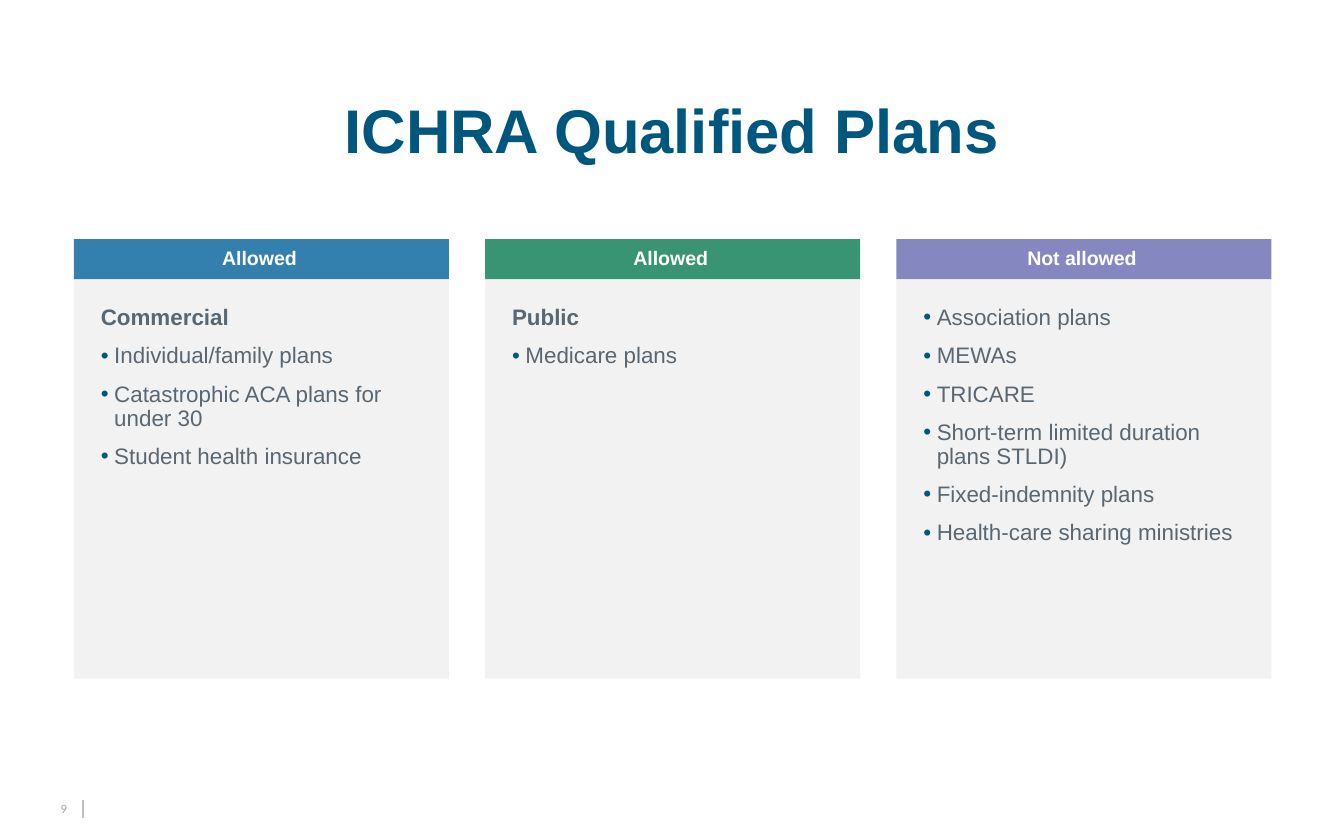
from dataclasses import dataclass
from lxml import etree
from pptx import Presentation
from pptx.dml.color import RGBColor as RGB
from pptx.enum.shapes import MSO_CONNECTOR as CONN, MSO_SHAPE as SHAPE
from pptx.enum.text import MSO_ANCHOR as ANCHOR, PP_ALIGN as ALIGN
from pptx.oxml.ns import qn
from pptx.util import Inches, Pt

TITLE = "ICHRA Qualified Plans"
PAGE = "9"
COLUMNS = [
    ("Allowed", "337FAE", "Commercial",
     ["Individual/family plans", "Catastrophic ACA plans for under 30",
      "Student health insurance"]),
    ("Allowed", "389473", "Public", ["Medicare plans"]),
    ("Not allowed", "8587C1", None,
     ["Association plans", "MEWAs", "TRICARE",
      "Short-term limited duration plans STLDI)", "Fixed-indemnity plans",
      "Health-care sharing ministries"]),
]


@dataclass(frozen=True)
class Theme:
    font: str = "Arial"
    page_font: str = "Calibri"
    accent: str = "00577E"
    text: str = "596772"
    panel: str = "F2F2F2"
    white: str = "FFFFFF"
    rule: str = "BFBFBF"
    page: str = "A6A6A6"
    title_size: float = 33
    header_size: float = 10.5
    body_size: float = 12
    page_size: float = 6.8


T = Theme()
LEFT, PITCH, WIDTH = 0.55, 3.06, 2.79
HEADER_TOP, HEADER_H, PANEL_H = 1.78, 0.3, 2.97


def style(p, size, color, bold=False, font=T.font, align=ALIGN.LEFT):
    p.alignment = align
    for r in p.runs:
        r.font.name, r.font.size, r.font.bold = font, Pt(size), bold
        r.font.color.rgb = RGB.from_string(color)


def set_frame(tf, insets, anchor):
    tf.word_wrap = True
    tf.vertical_anchor = anchor
    tf.margin_left, tf.margin_top, tf.margin_right, tf.margin_bottom = map(Inches, insets)


def add_block(s, x, y, h, fill, insets, anchor):
    sp = s.shapes.add_shape(SHAPE.RECTANGLE, Inches(x), Inches(y), Inches(WIDTH), Inches(h))
    sp.shadow.inherit = False
    sp.fill.solid()
    sp.fill.fore_color.rgb = RGB.from_string(fill)
    sp.line.fill.background()
    set_frame(sp.text_frame, insets, anchor)
    return sp.text_frame


def add_bullet(p):
    pPr = p._p.get_or_add_pPr()
    pPr.set("marL", str(Inches(0.1)))
    pPr.set("indent", str(-Inches(0.1)))
    color = etree.SubElement(pPr, qn("a:buClr"))
    etree.SubElement(color, qn("a:srgbClr"), val=T.accent)
    etree.SubElement(pPr, qn("a:buFont"), typeface=T.font)
    etree.SubElement(pPr, qn("a:buChar"), char="•")


def add_column(s, x, label, color, heading, items):
    tf = add_block(s, x, HEADER_TOP, HEADER_H, color, (0.07, 0.05, 0.1, 0.05), ANCHOR.MIDDLE)
    tf.text = label
    tf.paragraphs[0].line_spacing = 0.9
    style(tf.paragraphs[0], T.header_size, T.white, True, align=ALIGN.CENTER)

    tf = add_block(s, x, HEADER_TOP + HEADER_H, PANEL_H, T.panel, (0.2,) * 4, ANCHOR.TOP)
    lines = ([heading] if heading else []) + items
    tf.text = "\n".join(lines)
    for i, p in enumerate(tf.paragraphs):
        is_heading = bool(heading) and i == 0
        p.line_spacing = 0.9
        if i:
            p.space_before = Pt(7.5)
        if not is_heading:
            add_bullet(p)
        style(p, T.body_size, T.text, is_heading)


def add_footer(s):
    rule = s.shapes.add_connector(CONN.STRAIGHT, Inches(0.62), Inches(6.09),
                                  Inches(0.62), Inches(5.95))
    rule.line.color.rgb = RGB.from_string(T.rule)
    rule.line.width = Pt(1)
    etree.SubElement(rule._element.spPr, qn("a:effectLst"))
    tf = s.shapes.add_textbox(Inches(0.3), Inches(5.96), Inches(0.2), Inches(0.12)).text_frame
    set_frame(tf, (0,) * 4, ANCHOR.TOP)
    tf.text = PAGE
    style(tf.paragraphs[0], T.page_size, T.page, font=T.page_font, align=ALIGN.RIGHT)


def main():
    prs = Presentation()
    prs.slide_width, prs.slide_height = Inches(10), Inches(6.25)
    s = prs.slides.add_slide(prs.slide_layouts[5])

    title = s.shapes.title
    title.left, title.top, title.width, title.height = map(Inches, (0.31, 0.54, 9.38, 0.9))
    tf = title.text_frame
    tf.text = TITLE
    tf.vertical_anchor = ANCHOR.MIDDLE
    tf.paragraphs[0].line_spacing = 0.9
    style(tf.paragraphs[0], T.title_size, T.accent, True, align=ALIGN.CENTER)

    for i, column in enumerate(COLUMNS):
        add_column(s, LEFT + i * PITCH, *column)
    add_footer(s)
    prs.save("out.pptx")


if __name__ == "__main__":
    main()
